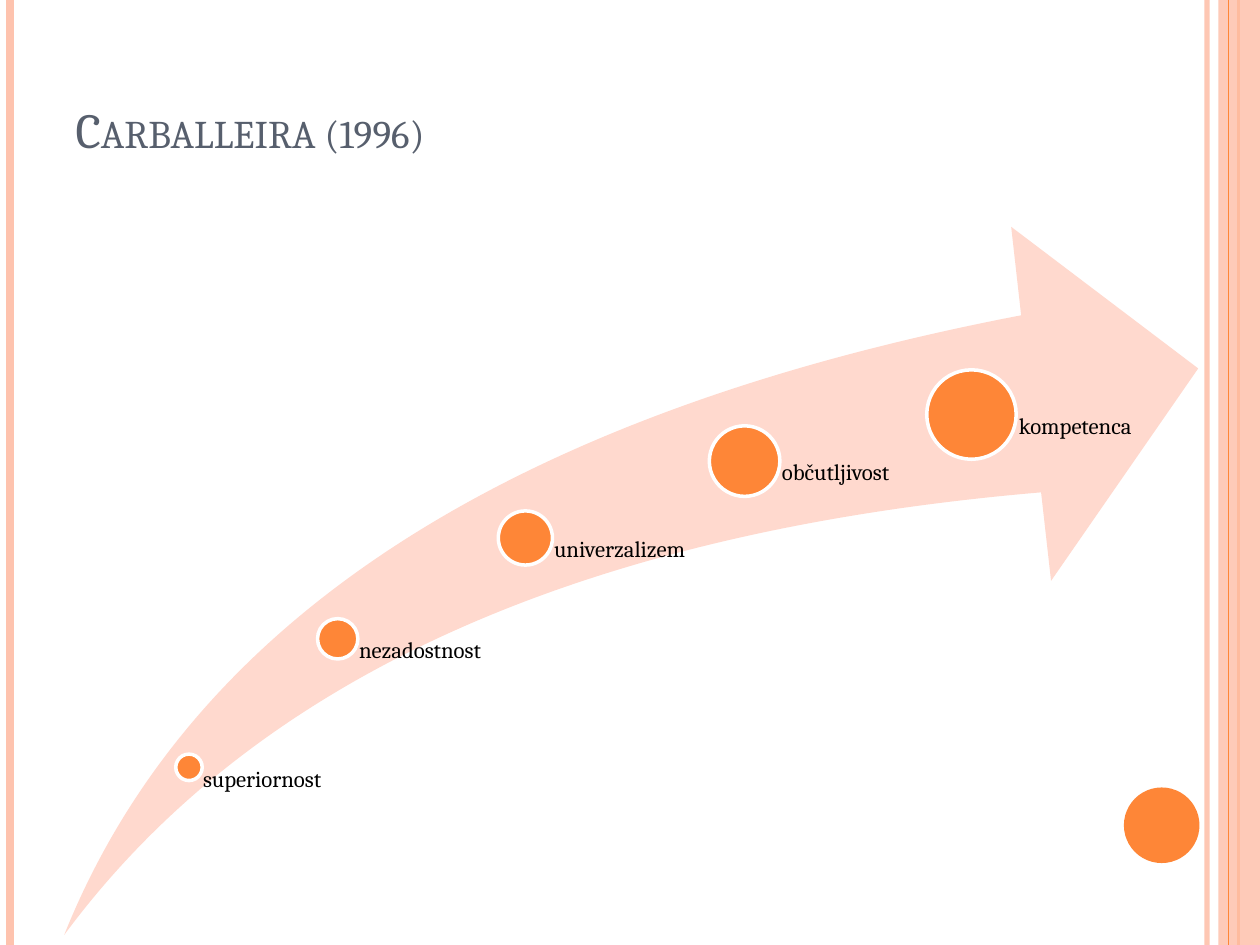
from lxml import etree
from pptx import Presentation
from pptx import util as u
from pptx.dml.color import RGBColor
from pptx.enum import shapes, text
from pptx.oxml.ns import qn

# The slide is a grid of 10 columns by 7.5 rows of square cells.
COLS, ROWS = 10, 7.5
CELL = u.Inches(1)
FONT = "Cambria"
ORANGE, PEACH, PALE = "FE8637", "FEC3AE", "FFD9CE"
FLOOR = 7.43  # row where all labels end

# label, centre column, centre row, dot size, label width
STAGES = [
    ("superiornost", 1.5, 6.09, 0.21, 1.18),
    ("nezadostnost", 2.68, 5.07, 0.32, 1.49),
    ("univerzalizem", 4.17, 4.27, 0.43, 1.74),
    ("občutljivost", 5.91, 3.66, 0.56, 1.8),
    ("kompetenca", 7.71, 3.29, 0.71, 1.8),
]

# column, colour, width in points, opacity in percent
RULES = [
    (9.58, PEACH, 3, 93),
    (0.08, PEACH, 4.5, 100),
    (9.83, ORANGE, 1.5, 100),
]


def grid(*cells):
    return [round(n * CELL) for n in cells]


def paint(fill, color, alpha=100):
    fill.solid()
    fill.fore_color.rgb = RGBColor.from_string(color)
    if alpha < 100:
        tone = fill._xPr.find(qn("a:solidFill"))[0]
        etree.SubElement(tone, qn("a:alpha"), val=str(alpha * 1000))


def shape(slide, kind, box, color, alpha=100, edge=None):
    item = slide.shapes.add_shape(kind, *grid(*box))
    item.shadow.inherit = False
    paint(item.fill, color, alpha)
    if edge:
        paint(item.line.fill, edge)
        item.line.width = u.Pt(2)
    else:
        item.line.fill.background()
    return item


def rule(slide, col, color, width, alpha=100):
    """Draw a vertical line over the full height."""
    line = slide.shapes.add_connector(
        shapes.MSO_CONNECTOR.STRAIGHT, *grid(col, 0, col, ROWS))
    paint(line.line.fill, color, alpha)
    line.line.width = u.Pt(width)
    etree.SubElement(line._element.spPr, qn("a:effectLst"))


def write(frame, words, size, color, small=False, space=None, after=None,
          anchor=text.MSO_ANCHOR.TOP):
    frame.word_wrap = True
    frame.auto_size = text.MSO_AUTO_SIZE.NONE
    frame.vertical_anchor = anchor
    para = frame.paragraphs[0]
    para.alignment = text.PP_ALIGN.LEFT
    para.line_spacing = space
    if after:
        para.space_after = u.Pt(after)
    run = para.add_run()
    run.text = words
    run.font.size = u.Pt(size)
    run.font.name = FONT
    run.font.color.rgb = RGBColor.from_string(color)
    if small:
        run.font._element.set("cap", "small")


def head(slide, words):
    title = slide.shapes.title
    title.left, title.top, title.width, title.height = grid(0.5, 0.3, 9, 1.01)
    write(title.text_frame, words, 28, "575F6D", small=True,
          anchor=text.MSO_ANCHOR.BOTTOM)


def frame(slide):
    """Draw the side bands and the corner dot."""
    for item in RULES:
        rule(slide, *item)
    kind = shapes.MSO_SHAPE
    shape(slide, kind.RECTANGLE, (9.67, 0, 0.33, ROWS), PEACH, alpha=87)
    rule(slide, 9.75, ORANGE, 0.75)
    shape(slide, kind.OVAL, (8.92, 6.25, 0.6, 0.6), ORANGE)


def swoosh(slide):
    arrow = shape(slide, shapes.MSO_SHAPE.SWOOSH_ARROW,
                  (0.51, 1.8, 9, 5.62), PALE)
    arrow.adjustments[0] = arrow.adjustments[1] = 0.25


def stage(slide, name, col, row, size, width):
    """Draw a dot with its label, which starts at the dot's centre."""
    shape(slide, shapes.MSO_SHAPE.OVAL,
          (col - size / 2, row - size / 2, size, size), ORANGE, edge="FFFFFF")
    box = slide.shapes.add_textbox(*grid(col, row, width, FLOOR - row))
    area = box.text_frame
    area.margin_top = area.margin_right = area.margin_bottom = 0
    area.margin_left = grid(size * 0.53)[0]
    write(area, name, 13, "000000", space=0.9, after=4.5)


def main():
    deck = Presentation()
    deck.slide_width, deck.slide_height = grid(COLS, ROWS)
    slide = deck.slides.add_slide(deck.slide_layouts.get_by_name("Title Only"))
    frame(slide)
    head(slide, "Carballeira (1996)")
    swoosh(slide)
    for item in STAGES:
        stage(slide, *item)
    deck.save("out.pptx")


if __name__ == "__main__":
    main()
